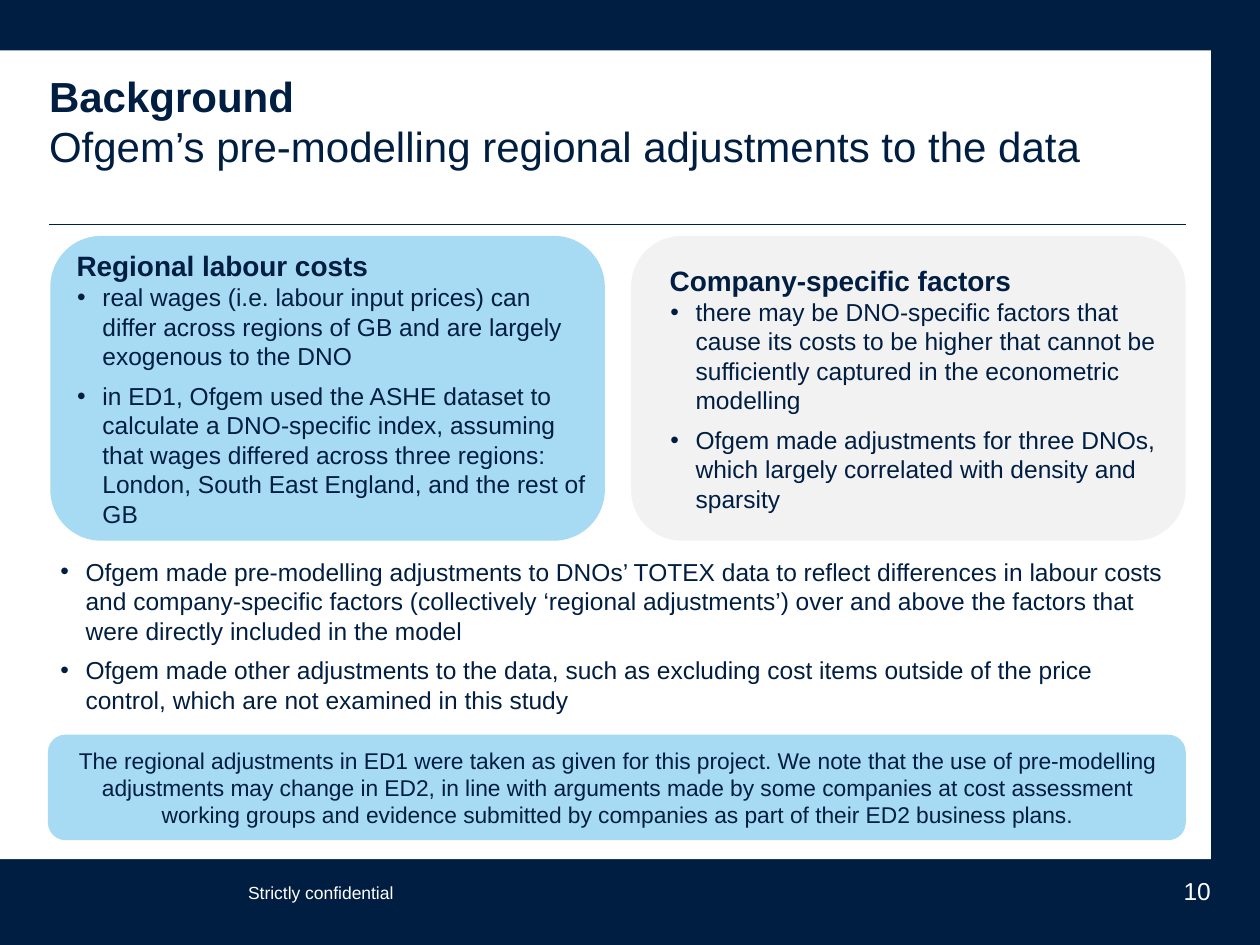
from collections import namedtuple
from dataclasses import dataclass

from lxml import etree
from pptx import Presentation
from pptx.dml.color import RGBColor
from pptx.enum import shapes as kinds, text as t
from pptx.oxml.ns import qn
from pptx.util import Pt


@dataclass(frozen=True)
class Theme:
    font: str = "Arial"
    navy: str = "001E41"
    white: str = "FFFFFF"
    sky: str = "A7DAF3"
    grey: str = "F2F2F2"
    title: float = 24
    heading: float = 16
    body: float = 14
    callout: float = 13
    footer: float = 10


THEME = Theme()
Box = namedtuple("Box", "left top width height")
PAGE = Box(0, 0, 720, 540)
PANEL = Box(0, 28.8, 692, 462.2)
CONTENT = Box(28, 40.3, 649.5, 440)
CARD_GAP = 15

LABOUR = ("Regional labour costs", [
    "real wages (i.e. labour input prices) can differ across regions of GB "
    "and are largely exogenous to the DNO",
    "in ED1, Ofgem used the ASHE dataset to calculate a DNO-specific index, "
    "assuming that wages differed across three regions: London, South East "
    "England, and the rest of GB",
])
COMPANY = ("Company-specific factors", [
    "there may be DNO-specific factors that cause its costs to be higher that "
    "cannot be sufficiently captured in the econometric modelling",
    "Ofgem made adjustments for three DNOs, which largely correlated with "
    "density and sparsity",
])
ADJUSTMENTS = [
    "Ofgem made pre-modelling adjustments to DNOs’ TOTEX data to reflect "
    "differences in labour costs and company-specific factors (collectively "
    "‘regional adjustments’) over and above the factors that were directly "
    "included in the model",
    "Ofgem made other adjustments to the data, such as excluding cost items "
    "outside of the price control, which are not examined in this study",
]
CALLOUT = (
    "The regional adjustments in ED1 were taken as given for this project. "
    "We note that the use of pre-modelling adjustments may change in ED2, in "
    "line with arguments made by some companies at cost assessment working "
    "groups and evidence submitted by companies as part of their ED2 business "
    "plans."
)


def points(box):
    return [Pt(length) for length in box]


def rgb(colour):
    return RGBColor.from_string(colour)


def prepare_frame(shape, margins=(0, 0), anchor=t.MSO_ANCHOR.TOP):
    frame = shape.text_frame
    frame.word_wrap = True
    frame.auto_size = t.MSO_AUTO_SIZE.NONE
    frame.vertical_anchor = anchor
    frame.margin_left = frame.margin_right = Pt(margins[0])
    frame.margin_top = frame.margin_bottom = Pt(margins[1])
    return frame


def write(frame, text, size=THEME.body, colour=THEME.navy, bold=False,
          align=t.PP_ALIGN.LEFT, indent=0, hanging=0, bullet=False, after=0):
    """Add one paragraph, filling the frame's empty first one if there is one."""
    first = frame.paragraphs[0]
    paragraph = frame.add_paragraph() if first.runs else first
    paragraph.alignment = align
    paragraph.space_after = Pt(after)
    props = paragraph._p.get_or_add_pPr()
    props.set("marL", str(Pt(indent)))
    props.set("indent", str(Pt(-hanging)))
    if bullet:
        etree.SubElement(props, qn("a:buFont")).set("typeface", THEME.font)
        etree.SubElement(props, qn("a:buChar")).set("char", "•")
    add_run(paragraph, text, size, colour, bold)
    return paragraph


def add_run(paragraph, text, size, colour, bold):
    run = paragraph.add_run()
    run.text = text
    run.font.name = THEME.font
    run.font.size = Pt(size)
    run.font.bold = bold
    run.font.color.rgb = rgb(colour)


def write_bullets(frame, items, indent):
    for item in items:
        write(frame, item, indent=indent, hanging=14.4, bullet=True, after=6)


def add_block(slide, box, fill, kind=kinds.MSO_SHAPE.ROUNDED_RECTANGLE):
    block = slide.shapes.add_shape(kind, *points(box))
    block.shadow.inherit = False
    block.fill.solid()
    block.fill.fore_color.rgb = rgb(fill)
    block.line.fill.background()
    return block


def add_page_frame(slide, page, panel):
    for box, fill in ((page, THEME.navy), (panel, THEME.white)):
        add_block(slide, box, fill, kinds.MSO_SHAPE.RECTANGLE)


def add_heading(slide, box, topic, subject):
    """Fill the title placeholder and draw the rule along the box's bottom."""
    title = slide.shapes.title
    slide.shapes._spTree.append(title._element)  # in front of the page frame
    title.left, title.top, title.width, title.height = points(
        box._replace(height=65.5))
    heading = write(prepare_frame(title), topic, size=THEME.title, bold=True)
    heading.add_line_break()
    add_run(heading, subject, THEME.title, THEME.navy, False)

    bottom = Pt(box.top + box.height)
    rule = slide.shapes.add_connector(
        kinds.MSO_CONNECTOR.STRAIGHT,
        Pt(box.left), bottom, Pt(box.left + box.width), bottom)
    rule.line.color.rgb = rgb(THEME.navy)
    rule.line.width = Pt(0.75)
    etree.SubElement(rule._element.spPr, qn("a:effectLst"))


def add_card(slide, box, fill, card, margins):
    heading, items = card
    frame = prepare_frame(add_block(slide, box, fill), margins,
                          t.MSO_ANCHOR.MIDDLE)
    write(frame, heading, size=THEME.heading, bold=True,
          indent=28.1, hanging=21.6)
    write_bullets(frame, items, indent=21.3)


def add_cards(slide, box):
    width = (box.width - CARD_GAP) / 2
    cards = ((THEME.sky, LABOUR, (0, 0)), (THEME.grey, COMPANY, (7.2, 3.6)))
    for column, (fill, card, margins) in enumerate(cards):
        left = box.left + column * (width + CARD_GAP)
        add_card(slide, box._replace(left=left, width=width), fill, card,
                 margins)


def add_adjustments(slide, box):
    frame = prepare_frame(slide.shapes.add_textbox(*points(box)), (7.2, 3.6))
    write_bullets(frame, ADJUSTMENTS, indent=14.4)


def add_callout(slide, box):
    frame = prepare_frame(add_block(slide, box, THEME.sky), (7.2, 3.6),
                          t.MSO_ANCHOR.MIDDLE)
    write(frame, CALLOUT, size=THEME.callout, align=t.PP_ALIGN.CENTER)


def add_footer(slide, box):
    notice = Box(box.left + 141.8, box.top + 3.6, 105, 12.2)
    number = Box(box.left + box.width - 62.6, box.top, 62.6, 16.6)
    for part, text, size, align in (
            (notice, "Strictly confidential", THEME.footer, t.PP_ALIGN.LEFT),
            (number, "10", THEME.body, t.PP_ALIGN.RIGHT)):
        frame = prepare_frame(slide.shapes.add_textbox(*points(part)))
        write(frame, text, size=size, colour=THEME.white, align=align)


def build_background_slide(deck):
    slide = deck.slides.add_slide(deck.slide_layouts[5])
    add_page_frame(slide, PAGE, PANEL)
    add_heading(slide, CONTENT._replace(height=87.9), "Background",
                "Ofgem’s pre-modelling regional adjustments to the data")
    add_cards(slide, Box(28.8, 134.8, 648.7, 174.2))
    add_adjustments(slide, CONTENT._replace(left=27.4, top=314.6, height=90.7))
    add_callout(slide, Box(27.4, 419.8, 650.2, 60.3))
    add_footer(slide, Box(0, 500.4, PANEL.width, 20))


def main():
    deck = Presentation()
    deck.slide_width, deck.slide_height = Pt(PAGE.width), Pt(PAGE.height)
    build_background_slide(deck)
    deck.save("out.pptx")


if __name__ == "__main__":
    main()
